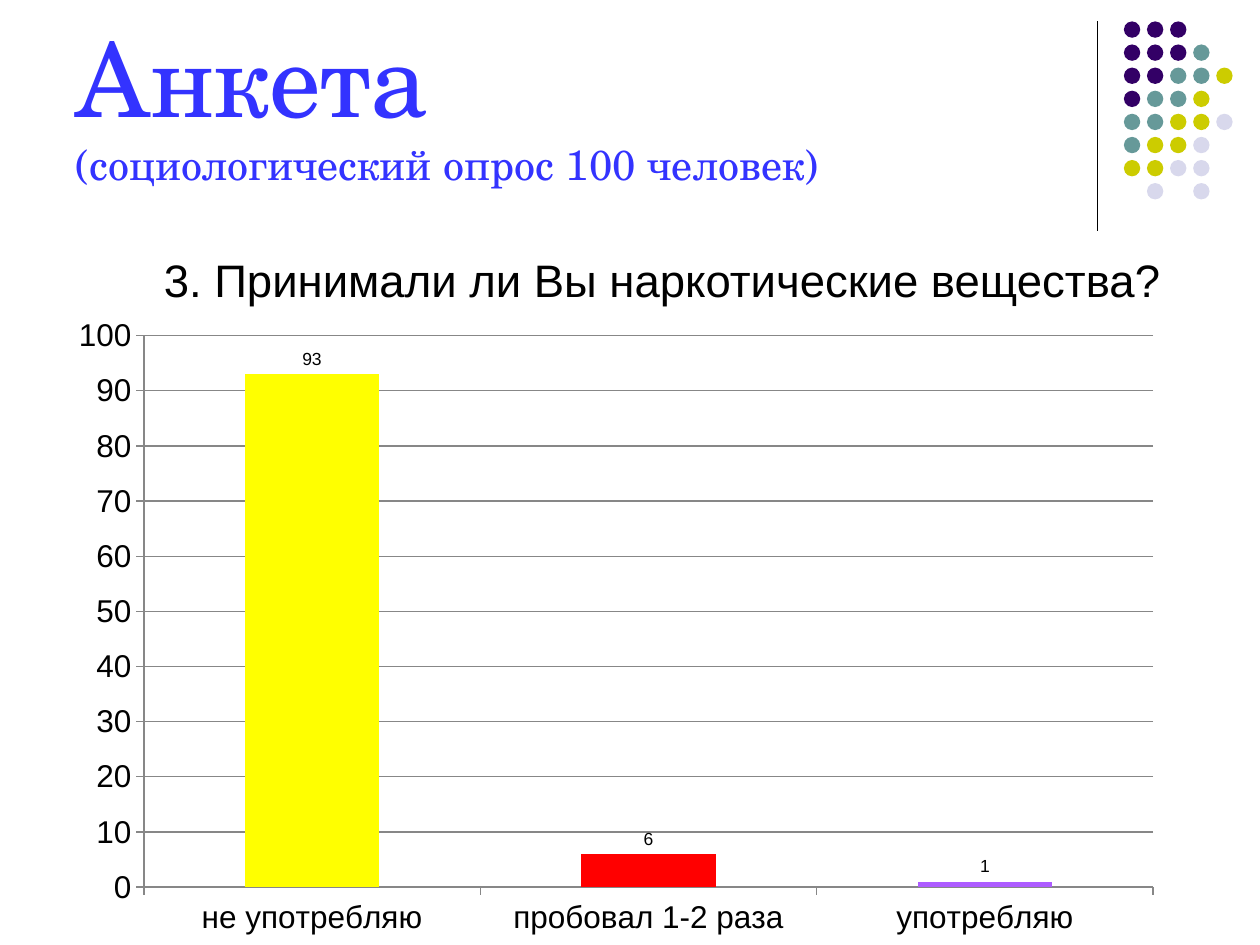
import pptx
import pptx.chart.data
import pptx.dml.color
import pptx.enum.chart
import pptx.enum.shapes
import pptx.enum.text
import pptx.util
from lxml import etree
from pptx.util import Inches, Pt

C = "http://schemas.openxmlformats.org/drawingml/2006/chart"


def rgb(value):
    return pptx.dml.color.RGBColor.from_string(value)


class SlideBuilder:
    title_font, body_font = "TeX Gyre Schola", "Arial"
    title_color, text_color, grid_color = "3333FF", "000000", "878787"

    def __init__(self, prs):
        self.s = prs.slides.add_slide(prs.slide_layouts[5])

    def line(self, x1, y1, x2, y2):
        cx = self.s.shapes.add_connector(
            pptx.enum.shapes.MSO_CONNECTOR.STRAIGHT,
            Inches(x1), Inches(y1), Inches(x2), Inches(y2))
        cx.line.color.rgb = rgb(self.text_color)
        cx.line.width = Pt(0.75)
        etree.SubElement(cx._element.spPr, pptx.oxml.ns.qn("a:effectLst"))

    def dot(self, x, y, size, color):
        sp = self.s.shapes.add_shape(
            pptx.enum.shapes.MSO_SHAPE.OVAL,
            Inches(x), Inches(y), Inches(size), Inches(size))
        sp.shadow.inherit = False
        sp.fill.solid()
        sp.fill.fore_color.rgb = rgb(color)
        sp.line.fill.background()

    def title(self, x, y, w, h, lines):
        sp = self.s.shapes.title
        sp.left, sp.top, sp.width, sp.height = map(Inches, (x, y, w, h))
        tf = sp.text_frame
        tf.word_wrap = True
        tf.auto_size = pptx.enum.text.MSO_AUTO_SIZE.NONE
        tf.vertical_anchor = pptx.enum.text.MSO_ANCHOR.BOTTOM
        p = tf.paragraphs[0]
        p.alignment = pptx.enum.text.PP_ALIGN.LEFT
        p.font.name = self.title_font
        p.font.color.rgb = rgb(self.title_color)
        for i, (text, size) in enumerate(lines):
            if i:
                p.add_line_break()
            r = p.add_run()
            r.text = text
            r.font.size = Pt(size)

    def text(self, x, y, w, h, text, size):
        tf = self.s.shapes.add_textbox(
            Inches(x), Inches(y), Inches(w), Inches(h)).text_frame
        tf.word_wrap = True
        tf.margin_left = tf.margin_right = tf.margin_top = tf.margin_bottom = 0
        p = tf.paragraphs[0]
        p.text = text
        p.font.name = self.body_font
        p.font.size = Pt(size)
        p.font.color.rgb = rgb(self.text_color)

    def column_chart(self, x, y, w, h, answers, plot):
        data = pptx.chart.data.CategoryChartData()
        data.categories = [name for name, _, _ in answers]
        data.add_series("Series 1", [value for _, value, _ in answers])
        chart = self.s.shapes.add_chart(
            pptx.enum.chart.XL_CHART_TYPE.COLUMN_CLUSTERED,
            Inches(x), Inches(y), Inches(w), Inches(h), data).chart
        chart.has_legend = chart.has_title = False
        chart.font.name = self.body_font
        chart.font.size = Pt(18)
        chart.font.color.rgb = rgb(self.text_color)

        # Axes and grid
        axis = chart.value_axis
        axis.minimum_scale, axis.maximum_scale, axis.major_unit = 0, 100, 10
        axis.has_major_gridlines = True
        for item in (axis, chart.category_axis):
            item.major_tick_mark = pptx.enum.chart.XL_TICK_MARK.OUTSIDE
        for item in (axis, chart.category_axis, axis.major_gridlines):
            item.format.line.color.rgb = rgb(self.grid_color)
            item.format.line.width = Pt(0.75)

        # Columns and their values
        bars = chart.plots[0]
        bars.gap_width = 150
        bars.vary_by_categories = False
        bars.has_data_labels = True
        labels = bars.data_labels
        labels.show_value = True
        labels.position = pptx.enum.chart.XL_LABEL_POSITION.OUTSIDE_END
        labels.font.size = Pt(10)
        for i, (_, _, color) in enumerate(answers):
            fill = bars.series[0].points[i].format.fill
            fill.solid()
            fill.fore_color.rgb = rgb(color)

        # Inner plot area as fractions of the chart
        area = chart._chartSpace.chart.plotArea
        for old in area.findall(f"{{{C}}}layout"):
            area.remove(old)
        layout = etree.Element(f"{{{C}}}layout")
        manual = etree.SubElement(layout, f"{{{C}}}manualLayout")
        settings = [("layoutTarget", "inner"), ("xMode", "edge"),
                    ("yMode", "edge"), *zip("xywh", plot)]
        for tag, value in settings:
            etree.SubElement(manual, f"{{{C}}}{tag}").set("val", str(value))
        area.insert(0, layout)


def main():
    prs = pptx.Presentation()
    prs.slide_width, prs.slide_height = Inches(10), Inches(7.5)
    page = SlideBuilder(prs)

    # Corner ornament: one letter per dot
    page.line(8.71, 0.17, 8.71, 1.83)
    colors = {"P": "330066", "T": "669999", "Y": "CCCC00", "L": "D8D8EC"}
    rows = ["PPP", "PPPT", "PPTTY", "PTTY", "TTYYL", "TYYL", "YYLL", " L L"]
    pitch = 0.55 / 3
    for i, row in enumerate(rows):
        for j, key in enumerate(row):
            if key in colors:
                page.dot(8.92 + j * pitch, 0.17 + i * pitch, 0.13, colors[key])

    # Heading and question
    page.title(0.5, 0.13, 8.25, 1.42,
               [("Анкета", 59), ("(социологический опрос 100 человек)", 24)])
    page.text(1.3, 2, 8.4, 0.42, "3. Принимали ли Вы наркотические вещества?", 26)

    # Survey answers
    answers = [("не употребляю", 93, "FFFF00"),
               ("пробовал 1-2 раза", 6, "FF0000"),
               ("употребляю", 1, "AD5CFF")]
    page.column_chart(0.43, 2.41, 8.9, 5.09, answers, (0.08, 0.05, 0.9, 0.86))

    prs.save("out.pptx")


if __name__ == "__main__":
    main()
